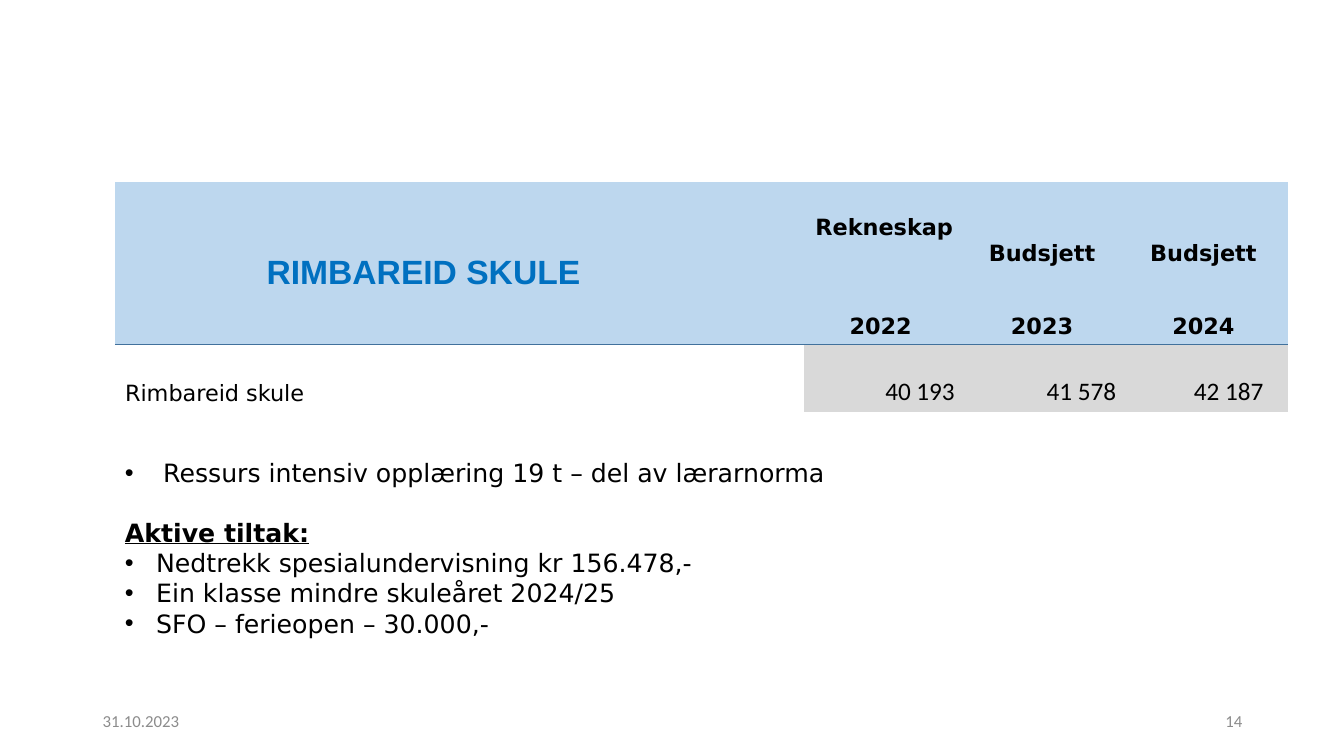
from dataclasses import dataclass, field

from lxml import etree
from pptx import Presentation
from pptx import util as u
from pptx.dml.color import RGBColor
from pptx.enum import text
from pptx.oxml import ns

BLACK = RGBColor(0, 0, 0)
GREY = RGBColor(0x8C, 0x8C, 0x8C)
TITLE_BLUE = RGBColor(0x00, 0x70, 0xC0)
HEADER_BLUE = RGBColor(0xBD, 0xD7, 0xEE)
VALUE_GREY = RGBColor(0xD9, 0xD9, 0xD9)
RULE_BLUE = RGBColor(0x41, 0x71, 0x9C)
NO_GRID_STYLE = "{2D5ABB26-0587-4C30-8999-92F81FD0307C}"

LEFT, CENTER, RIGHT = text.PP_ALIGN.LEFT, text.PP_ALIGN.CENTER, text.PP_ALIGN.RIGHT
TOP, MIDDLE = text.MSO_ANCHOR.TOP, text.MSO_ANCHOR.MIDDLE

FOOTER = {"name": "Calibri", "size": u.Pt(12)}
TITLE = {"name": "Arial", "size": u.Pt(24), "bold": True}
BODY = {"name": "DejaVu Sans", "size": u.Pt(18)}
HEADING = BODY | {"bold": True, "underline": True}
ROW_LABEL = {"name": "DejaVu Sans", "size": u.Pt(16)}
COLUMN_HEAD = ROW_LABEL | {"bold": True}
AMOUNT = {"name": "Calibri", "size": u.Pt(18)}


@dataclass
class Line:
    words: str
    style: dict
    color: RGBColor = BLACK
    align: text.PP_ALIGN = LEFT
    bullet_indent: float = 0
    space_before: float = 0


@dataclass
class Box:
    place: tuple[float, float, float, float]
    lines: list[Line]
    anchor: text.MSO_ANCHOR = TOP


@dataclass
class Cell:
    line: Line | None = None
    fill: RGBColor | None = None
    margins: dict = field(default_factory=dict)


BOXES = [
    Box((0.92, 6.95, 3, 0.4), [Line("31.10.2023", FOOTER, GREY)], MIDDLE),
    Box((9.42, 6.95, 3, 0.4), [Line("14", FOOTER, GREY, RIGHT)], MIDDLE),
    Box((1.14, 4.49, 12.55, 2.52), [
        Line("Ressurs intensiv opplæring 19 t – del av lærarnorma", BODY, bullet_indent=0.38),
        Line("Aktive tiltak:", HEADING, space_before=21),
        Line("Nedtrekk spesialundervisning kr 156.478,-", BODY, bullet_indent=0.31),
        Line("Ein klasse mindre skuleåret 2024/25", BODY, bullet_indent=0.31),
        Line("SFO – ferieopen – 30.000,-", BODY, bullet_indent=0.31),
    ]),
    Box((0.78, 2.44, 6.84, 0.5), [Line("RIMBAREID SKULE", TITLE, TITLE_BLUE, CENTER)]),
]


def header(words: str, **margins: float) -> Cell:
    return Cell(Line(words, COLUMN_HEAD, align=CENTER), HEADER_BLUE, margins)


def amount(words: str, **margins: float) -> Cell:
    return Cell(Line(words, AMOUNT, align=RIGHT), VALUE_GREY, margins)


TABLE_LEFT, TABLE_TOP = 1.14, 1.81
COLUMN_WIDTHS = [6.83, 1.6, 1.6, 1.6]
ROW_HEIGHTS = [0.89, 0.72, 0.67]
LAST_HEADER_ROW = 1
BUDGET_ROWS = [
    [Cell(fill=HEADER_BLUE), header("Rekneskap", bottom=0.31, left=0.05, right=0.05),
     header("Budsjett", right=0.17), header("Budsjett", right=0.17)],
    [Cell(fill=HEADER_BLUE)] + [header(year, right=0.17) for year in ("2022", "2023", "2024")],
    [Cell(Line("Rimbareid skule", ROW_LABEL)),
     amount("40 193"), amount("41 578"), amount("42 187", right=0.24)],
]


def write_line(paragraph, line: Line) -> None:
    if line.bullet_indent:
        indent = u.Inches(line.bullet_indent)
        properties = paragraph._p.get_or_add_pPr()
        properties.set("marL", str(indent))
        properties.set("indent", str(-indent))
        etree.SubElement(properties, ns.qn("a:buFont"), typeface="Arial")
        etree.SubElement(properties, ns.qn("a:buChar"), char="•")
    paragraph.alignment = line.align
    if line.space_before:
        paragraph.space_before = u.Pt(line.space_before)
    run = paragraph.add_run()
    run.text = line.words
    for attribute, value in line.style.items():
        setattr(run.font, attribute, value)
    run.font.color.rgb = line.color


def add_box(slide, box: Box) -> None:
    frame = slide.shapes.add_textbox(*map(u.Inches, box.place)).text_frame
    frame.word_wrap = True
    frame.vertical_anchor = box.anchor
    for index, line in enumerate(box.lines):
        write_line(frame.add_paragraph() if index else frame.paragraphs[0], line)


def rule_below(cell) -> None:
    """Draw a thin line along the bottom edge of a table cell."""
    border = etree.Element(ns.qn("a:lnB"), w=str(u.Pt(0.75)))
    fill = etree.SubElement(border, ns.qn("a:solidFill"))
    etree.SubElement(fill, ns.qn("a:srgbClr"), val=str(RULE_BLUE))
    cell._tc.get_or_add_tcPr().insert(0, border)


def fill_cell(cell, content: Cell) -> None:
    cell.vertical_anchor = text.MSO_ANCHOR.BOTTOM
    for side, margin in content.margins.items():
        setattr(cell, f"margin_{side}", u.Inches(margin))
    if content.fill is None:
        cell.fill.background()
    else:
        cell.fill.solid()
        cell.fill.fore_color.rgb = content.fill
    if content.line:
        write_line(cell.text_frame.paragraphs[0], content.line)


def add_budget_table(slide) -> None:
    place = TABLE_LEFT, TABLE_TOP, sum(COLUMN_WIDTHS), sum(ROW_HEIGHTS)
    table = slide.shapes.add_table(
        len(ROW_HEIGHTS), len(COLUMN_WIDTHS), *map(u.Inches, place)).table
    table.first_row = table.horz_banding = False
    table._tbl.tblPr.find(ns.qn("a:tableStyleId")).text = NO_GRID_STYLE
    for column, width in zip(table.columns, COLUMN_WIDTHS):
        column.width = u.Inches(width)
    for row_index, (row, height) in enumerate(zip(table.rows, ROW_HEIGHTS)):
        row.height = u.Inches(height)
        for cell, content in zip(row.cells, BUDGET_ROWS[row_index]):
            fill_cell(cell, content)
            if row_index == LAST_HEADER_ROW:
                rule_below(cell)


def main() -> None:
    deck = Presentation()
    deck.slide_width, deck.slide_height = u.Inches(13.33), u.Inches(7.5)
    slide = deck.slides.add_slide(deck.slide_layouts[6])
    *page_texts, title = BOXES
    for box in page_texts:
        add_box(slide, box)
    add_budget_table(slide)
    add_box(slide, title)
    deck.save("out.pptx")


if __name__ == "__main__":
    main()
